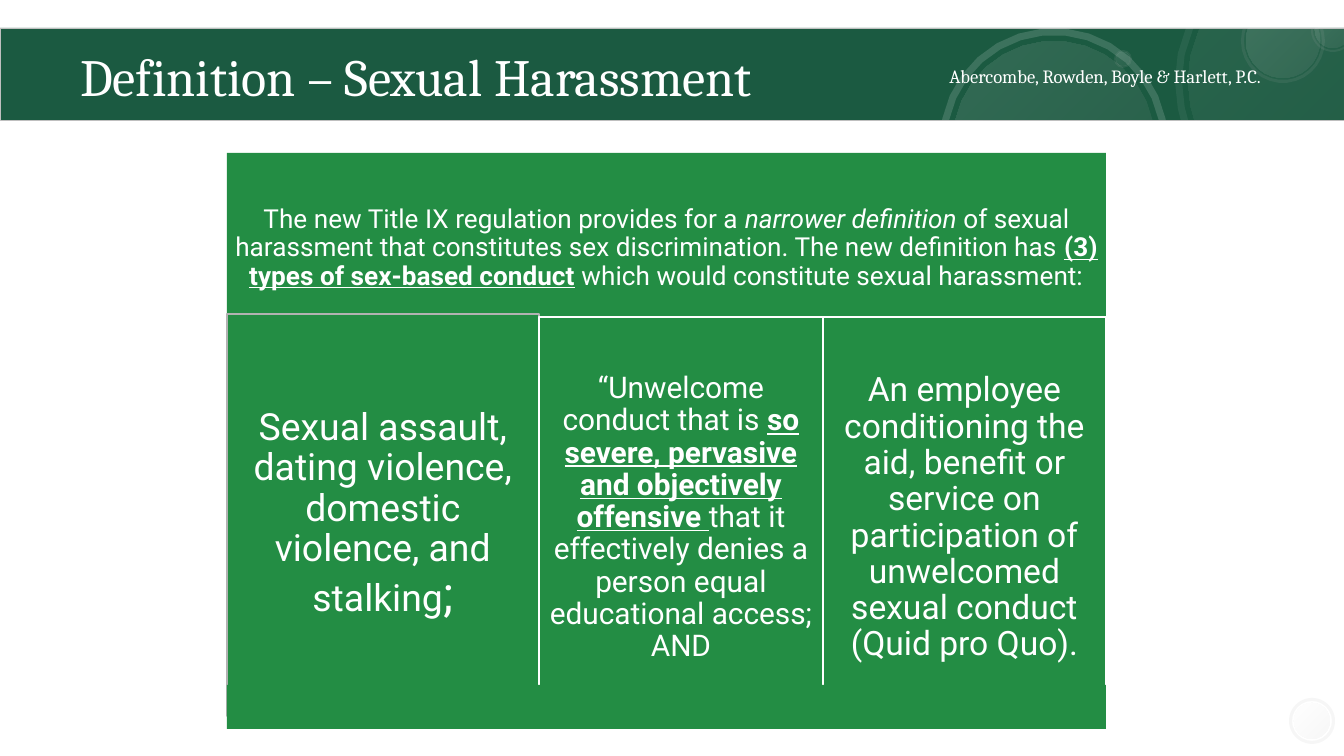
import math
from lxml import etree
from pptx import Presentation
from pptx import util as u
from pptx.dml.color import RGBColor
from pptx.enum import shapes, text
from pptx.oxml import parse_xml
from pptx.oxml.ns import nsdecls, qn

SCALE = u.Inches(10) / 1344
COLORS = {
    "band": "1B5A41",
    "band_edge": "BFBFBF",
    "panel": "238D44",
    "white": "FFFFFF",
    "gray": "B2B2B2",
}
HEADING, BODY = "Cambria", "Roboto"
STRONG = {"bold": True, "underline": True}


def px(length):
    return u.Emu(round(length * SCALE))


def rgb(name):
    return RGBColor.from_string(COLORS[name])


def write(box, spans, size, font=BODY, align="LEFT", inset=None, spacing=None):
    frame = box.text_frame
    frame.word_wrap = True
    frame.auto_size = text.MSO_AUTO_SIZE.NONE
    frame.vertical_anchor = text.MSO_ANCHOR.MIDDLE
    if inset is not None:
        frame.margin_left = frame.margin_right = px(inset)
        frame.margin_top = frame.margin_bottom = px(inset)
    para = frame.paragraphs[0]
    para.alignment = text.PP_ALIGN[align]
    if spacing:
        para.line_spacing = spacing
    for words, style in spans:
        span = para.add_run()
        span.text = words
        span.font.name = font
        span.font.size = u.Pt(style.get("size", size))
        span.font.bold = style.get("bold", False)
        span.font.italic = style.get("italic", False)
        span.font.underline = style.get("underline", False)
        span.font.color.rgb = rgb("white")


def add_rectangle(page, area, fill, line=None, width=0.85):
    box = page.shapes.add_shape(shapes.MSO_SHAPE.RECTANGLE, *map(px, area))
    box.shadow.inherit = False
    box.fill.solid()
    box.fill.fore_color.rgb = rgb(fill)
    if line:
        box.line.color.rgb = rgb(line)
        box.line.width = u.Pt(width)
    else:
        box.line.fill.background()
    return box


def add_label(page, area, words, size, align="LEFT"):
    box = page.shapes.add_textbox(*map(px, area))
    write(box, [(words, {})], size, font=HEADING, align=align)


def set_tint(shape, color, alpha):
    shape.fill.solid()
    shape.fill.fore_color.rgb = rgb(color)
    value = shape._element.spPr.find(qn("a:solidFill")).find(qn("a:srgbClr"))
    etree.SubElement(value, qn("a:alpha")).set("val", str(alpha * 1000))


def set_glow(shape, alpha):
    shape.fill.solid()
    solid = shape._element.spPr.find(qn("a:solidFill"))
    stops = "".join(
        f'<a:gs pos="{place}"><a:srgbClr val="{COLORS[color]}">'
        f'<a:alpha val="{alpha * 1000}"/></a:srgbClr></a:gs>'
        for place, color in ((0, "white"), (100000, "gray"))
    )
    glow = parse_xml(
        f'<a:gradFill {nsdecls("a")}><a:gsLst>{stops}</a:gsLst>'
        '<a:path path="circle"><a:fillToRect r="100000" b="100000"/></a:path>'
        "</a:gradFill>"
    )
    solid.getparent().replace(solid, glow)


def clipped_circle(center, radius, clip):
    x, y = center
    left, top, width, height = clip
    right, bottom = left + width, top + height
    points = [
        (x + radius * math.cos(math.radians(angle)),
         y + radius * math.sin(math.radians(angle)))
        for angle in range(0, 360, 12)
    ]
    for sign in (-1, 1):
        for edge in (left, right):
            if abs(edge - x) < radius:
                points.append((edge, y + sign * math.sqrt(radius**2 - (edge - x)**2)))
        for edge in (top, bottom):
            if abs(edge - y) < radius:
                points.append((x + sign * math.sqrt(radius**2 - (edge - y)**2), edge))
    for corner in ((left, top), (right, top), (right, bottom), (left, bottom)):
        if math.dist(corner, center) < radius:
            points.append(corner)
    points = [(a, b) for a, b in points if left <= a <= right and top <= b <= bottom]
    middle_x = sum(a for a, b in points) / len(points)
    middle_y = sum(b for a, b in points) / len(points)
    points.sort(key=lambda point: math.atan2(point[1] - middle_y, point[0] - middle_x))
    return [(px(a), px(b)) for a, b in points]


def add_circles(page, center, radii, clip):
    x, y = center
    outer, inner = radii[0], radii[-1]
    if clip:
        outlines = [clipped_circle(center, radius, clip) for radius in radii]
        builder = page.shapes.build_freeform(*outlines[0][0])
        builder.add_line_segments(outlines[0][1:], close=True)
        for outline in outlines[1:]:
            builder.move_to(*outline[0])
            builder.add_line_segments(outline[1:], close=True)
        shape = builder.convert_to_shape()
    else:
        kind = shapes.MSO_SHAPE.OVAL if outer == inner else shapes.MSO_SHAPE.DONUT
        area = (x - outer, y - outer, 2 * outer, 2 * outer)
        shape = page.shapes.add_shape(kind, *map(px, area))
        if outer != inner:
            shape.adjustments[0] = (outer - inner) / (2 * outer)
    shape.shadow.inherit = False
    shape.line.fill.background()
    return shape


def add_bubble(page, center, disc, ring, clip=None, glow=10, color="gray", alpha=11):
    set_glow(add_circles(page, center, [disc], clip), glow)
    set_tint(add_circles(page, center, ring, clip), color, alpha)


def add_title_band(page, area):
    left, top, width, height = area
    add_rectangle(page, area, "band", "band_edge", 0.25)
    bubbles = [
        ((1308, 53), 120, (133, 126), {"clip": area, "glow": 6, "color": "white", "alpha": 6}),
        ((1054, 114), 101, (114, 107), {"clip": area, "color": "white", "alpha": 15}),
        ((1283, 13), 37, (42, 39), {"clip": area}),
        ((1333, 2), 18, (22, 20), {"clip": area}),
        ((1123, 31), 7, (9, 7), {}),
    ]
    for (x, y), disc, ring, style in bubbles:
        add_bubble(page, (left + x, top + y), disc, ring, **style)
    add_label(page, (left + 67, top + 3, 796, 90),
              "Definition – Sexual Harassment", 28)
    add_label(page, (left + 809, top + 22, 465, 52),
              "Abercombe, Rowden, Boyle & Harlett, P.C.", 10, align="RIGHT")


def add_definition_panel(page, area):
    left, top, width, height = area
    intro = [
        ("The new Title IX regulation provides for a ", {}),
        ("narrower definition ", {"italic": True}),
        ("of sexual harassment that constitutes sex discrimination. "
         "The new definition has ", {}),
        ("(3) types of sex-based conduct", STRONG),
        (" which would constitute sexual harassment:", {}),
    ]
    box = add_rectangle(page, (left, top, width, 191), "panel")
    write(box, intro, 14, align="CENTER", inset=8, spacing=0.9)

    cards = [
        (312, 161, "gray", 20, 11, [
            ("Sexual assault, dating violence, domestic violence, and stalking", {}),
            (";", {"size": 26}),
        ]),
        (284, 164, "white", 16, 9, [
            ("“Unwelcome conduct that is ", {}),
            ("so severe, pervasive and objectively offensive ", STRONG),
            ("that it effectively denies a person equal educational access; AND", {}),
        ]),
        (283, 164, "white", 18, 9, [
            ("An employee conditioning the aid, benefit or service on participation "
             "of unwelcomed sexual conduct (Quid pro Quo).", {}),
        ]),
    ]
    x = left
    for card_width, drop, line, size, inset, spans in cards:
        box = add_rectangle(page, (x, top + drop, card_width, 402), "panel", line)
        write(box, spans, size, align="CENTER", inset=inset, spacing=0.9)
        x += card_width
    add_rectangle(page, (left, top + height - 44, width, 44), "panel")


def main():
    deck = Presentation()
    deck.slide_width, deck.slide_height = px(1344), px(756)
    page = deck.slides.add_slide(deck.slide_layouts[6])
    add_title_band(page, (0, 28, 1344, 92))
    add_bubble(page, (1312, 721), 18, (23, 20))
    add_definition_panel(page, (227, 153, 879, 576))
    deck.save("out.pptx")


if __name__ == "__main__":
    main()
